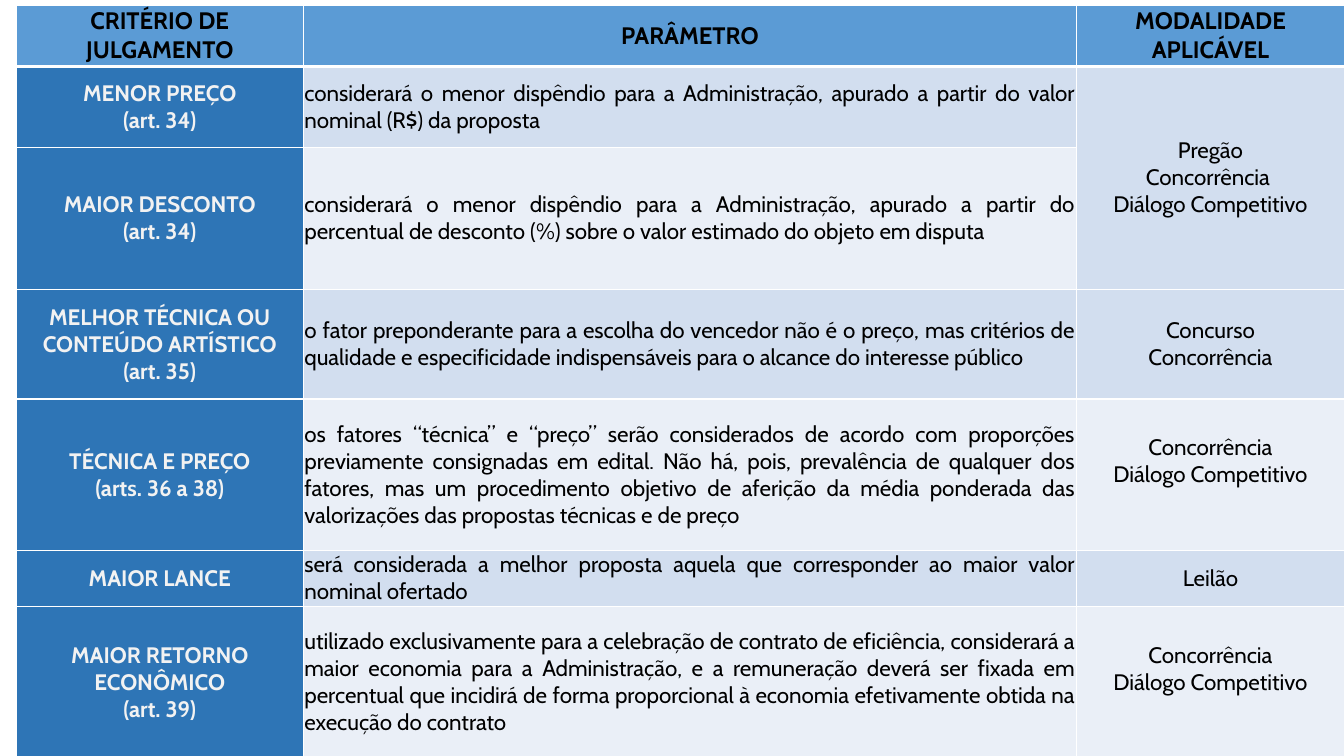
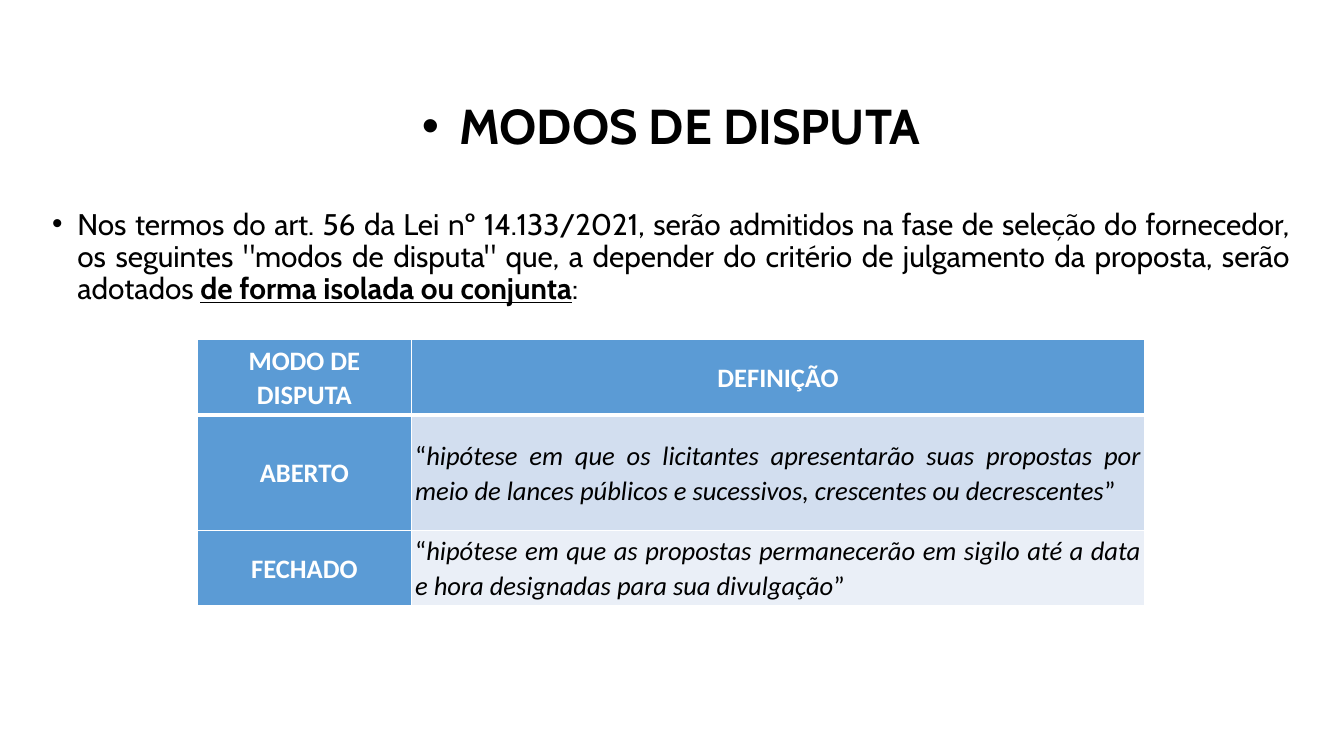
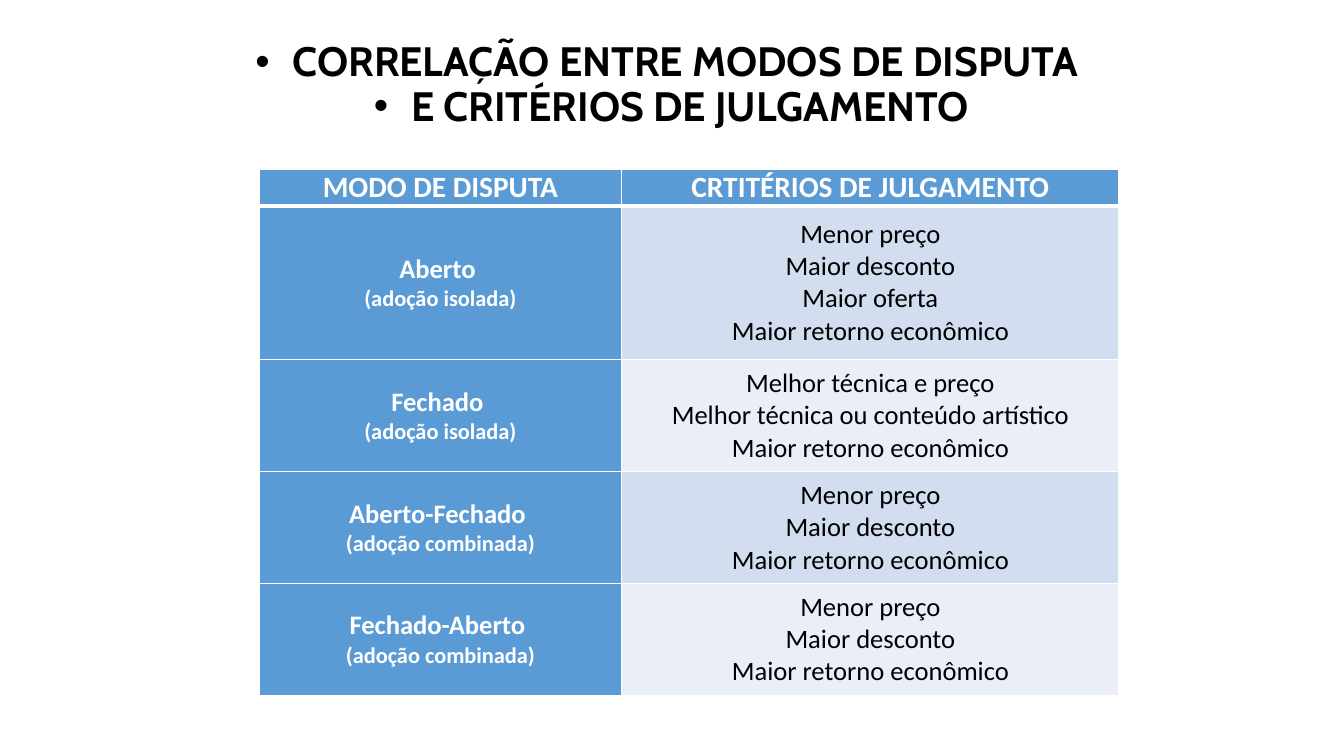
import pptx
import pptx.dml.color
import pptx.enum.text
import pptx.oxml
import pptx.oxml.ns
import pptx.util

Pt = pptx.util.Pt
ALIGN = pptx.enum.text.PP_ALIGN
ANCHOR = pptx.enum.text.MSO_ANCHOR

BLACK, WHITE, PALE = "000000", "FFFFFF", "F2F2F2"
BLUE, DARK_BLUE = "5B9BD5", "2E75B6"
BANDS = ("D2DEEF", "EAEFF7")
TEXT_LEFT, TEXT_WIDTH = 30.2, 898.6
LINE_HEIGHT = 19.4


def note(text):
    return [(text, {"size": 16})]


def quote(text):
    return [("“", {}), (text, {"italic": True}), ("”", {})]


CRITERIA = {
    "place": (11.5, 3.6),
    "widths": (205.2, 552.2, 191.5),
    "heights": (43.9, 57.6, 101.5, 78.5, 108, 40.3, 108),
    "aligns": (ALIGN.CENTER, ALIGN.JUSTIFY, ALIGN.CENTER),
    "font": "Cabin", "header_size": 17, "size": 16, "inset": 0.7, "spacing": 1,
    "header_color": BLACK, "side_color": PALE, "side_fill": DARK_BLUE,
    "merges": [((1, 2), (2, 2))],
    "raised": [(4, 2), (6, 2)],
    "rows": [
        [["CRITÉRIO DE JULGAMENTO"], ["PARÂMETRO"], ["MODALIDADE APLICÁVEL"]],
        [["MENOR PREÇO", "(art. 34)"],
         ["considerará o menor dispêndio para a Administração, apurado a partir do valor "
          "nominal (R$) da proposta"],
         ["Pregão", "Concorrência ", "Diálogo Competitivo"]],
        [["MAIOR DESCONTO", "(art. 34)"],
         ["considerará o menor dispêndio para a Administração, apurado a partir do "
          "percentual de desconto (%) sobre o valor estimado do objeto em disputa"],
         []],
        [["MELHOR TÉCNICA OU CONTEÚDO ARTÍSTICO", "(art. 35)"],
         ["o fator preponderante para a escolha do vencedor não é o preço, mas critérios de "
          "qualidade e especificidade indispensáveis para o alcance do interesse público"],
         ["Concurso", "Concorrência"]],
        [["TÉCNICA E PREÇO", "(arts. 36 a 38)"],
         ["os fatores “técnica” e “preço” serão considerados de acordo com proporções "
          "previamente consignadas em edital. Não há, pois, prevalência de qualquer dos "
          "fatores, mas um procedimento objetivo de aferição da média ponderada das "
          "valorizações das propostas técnicas e de preço"],
         ["Concorrência", "Diálogo Competitivo"]],
        [["MAIOR LANCE"],
         ["será considerada a melhor proposta aquela que corresponder ao maior valor "
          "nominal ofertado"],
         ["Leilão"]],
        [["MAIOR RETORNO ECONÔMICO", "(art. 39)"],
         ["utilizado exclusivamente para a celebração de contrato de eficiência, considerará a "
          "maior economia para a Administração, e a remuneração deverá ser fixada em "
          "percentual que incidirá de forma proporcional à economia efetivamente obtida na "
          "execução do contrato"],
         ["Concorrência", "Diálogo Competitivo"]],
    ],
}

MODES = {
    "place": (141.1, 242.6),
    "widths": (152.6, 524.2),
    "heights": (54, 82.1, 54),
    "aligns": (ALIGN.CENTER, ALIGN.JUSTIFY),
    "font": "Calibri", "header_size": 19, "size": 19, "inset": 2.9, "spacing": 1.07,
    "header_color": WHITE, "side_color": WHITE, "side_fill": BLUE,
    "rows": [
        [["MODO DE DISPUTA"], ["DEFINIÇÃO"]],
        [["ABERTO"],
         [quote("hipótese em que os licitantes apresentarão suas propostas por meio de lances "
                "públicos e sucessivos, crescentes ou decrescentes")]],
        [["FECHADO"],
         [quote("hipótese em que as propostas permanecerão em sigilo até a data e hora "
                "designadas para sua divulgação")]],
    ],
}

COMMON = ["Menor preço", "Maior desconto", "Maior retorno econômico"]
CORRELATION = {
    "place": (185, 121),
    "widths": (259.2, 355),
    "heights": (25.9, 110.2, 79.9, 79.9, 79.9),
    "aligns": (ALIGN.CENTER, ALIGN.CENTER),
    "font": "Calibri", "header_size": 21, "size": 19, "inset": 7.2, "spacing": 1,
    "header_color": WHITE, "side_color": WHITE, "side_fill": BLUE,
    "rows": [
        [["MODO DE DISPUTA"], ["CRTITÉRIOS DE JULGAMENTO"]],
        [["Aberto ", note("(adoção isolada)")],
         ["Menor preço", "Maior desconto", "Maior oferta", "Maior retorno econômico"]],
        [["Fechado ", note("(adoção isolada)")],
         ["Melhor técnica e preço", "Melhor técnica ou conteúdo artístico",
          "Maior retorno econômico"]],
        [["Aberto-Fechado ", note("(adoção combinada)")], COMMON],
        [["Fechado-Aberto ", note("(adoção combinada)")], COMMON],
    ],
}

INTRO = [
    ("Nos termos do art. 56 da Lei nº 14.133/2021, serão admitidos na fase de seleção do "
     "fornecedor, os seguintes \"modos de disputa\" que, a depender do critério de julgamento "
     "da proposta, serão adotados ", {}),
    ("de forma isolada ou conjunta", {"bold": True, "underline": True}),
    (":", {}),
]

SLIDES = [
    {"table": CRITERIA},
    {"title": ["MODOS DE DISPUTA"], "title_top": 69.1, "title_size": 35,
     "intro": INTRO, "table": MODES},
    {"title": ["CORRELAÇÃO ENTRE MODOS DE DISPUTA ", "E CRITÉRIOS DE JULGAMENTO"],
     "title_top": 25.9, "title_size": 29.3, "table": CORRELATION},
]


def rgb(value):
    return pptx.dml.color.RGBColor.from_string(value)


def add_bullet(para, indent):
    properties = para._p.get_or_add_pPr()
    properties.set("marL", str(Pt(indent)))
    properties.set("indent", str(-Pt(indent)))
    for tag, name, value in (("buFont", "typeface", "Arial"), ("buChar", "char", "•")):
        properties.append(pptx.oxml.parse_xml(
            f'<a:{tag} {pptx.oxml.ns.nsdecls("a")} {name}="{value}"/>'))


def write(frame, lines, color, align, spacing, bullet=None, **formats):
    frame.word_wrap = True
    for index, line in enumerate(lines):
        para = frame.paragraphs[0] if index == 0 else frame.add_paragraph()
        if bullet:
            add_bullet(para, bullet)
        para.alignment = align
        para.line_spacing = spacing
        para.space_before = para.space_after = Pt(0)
        for text, extra in ([(line, {})] if isinstance(line, str) else line):
            span = para.add_run()
            span.text = text
            span.font.color.rgb = rgb(color)
            for name, value in {**formats, **extra}.items():
                setattr(span.font, name, Pt(value) if name == "size" else value)


def set_borders(cell, top, bottom):
    properties = cell._tc.get_or_add_tcPr()
    for index, (side, width) in enumerate((("L", 1), ("R", 1), ("T", top), ("B", bottom))):
        properties.insert(index, pptx.oxml.parse_xml(
            f'<a:ln{side} {pptx.oxml.ns.nsdecls("a")} w="{Pt(width)}"><a:solidFill>'
            f'<a:srgbClr val="{WHITE}"/></a:solidFill></a:ln{side}>'))


def add_table(page, data):
    rows, widths, heights = data["rows"], data["widths"], data["heights"]
    bounds = [Pt(v) for v in (*data["place"], sum(widths), sum(heights))]
    table = page.shapes.add_table(len(rows), len(widths), *bounds).table
    table.first_row = table.horz_banding = False
    for column, width in zip(table.columns, widths):
        column.width = Pt(width)
    for r, row in enumerate(rows):
        table.rows[r].height = Pt(heights[r])
        for c, lines in enumerate(row):
            cell = table.cell(r, c)
            if r == 0:
                fill, color, size = BLUE, data["header_color"], data["header_size"]
            elif c == 0:
                fill, color, size = data["side_fill"], data["side_color"], data["size"]
            else:
                fill, color, size = BANDS[(r - 1) % 2], BLACK, data["size"]
            set_borders(cell, 3 if r == 1 else 1, 3 if r == 0 else 1)
            cell.fill.solid()
            cell.fill.fore_color.rgb = rgb(fill)
            cell.vertical_anchor = ANCHOR.MIDDLE
            raised = (r, c) in data.get("raised", [])
            cell.margin_left = cell.margin_right = Pt(data["inset"])
            cell.margin_top, cell.margin_bottom = Pt(0), Pt(LINE_HEIGHT if raised else 0)
            align = ALIGN.CENTER if r == 0 else data["aligns"][c]
            write(cell.text_frame, lines, color, align, data["spacing"],
                  name=data["font"], size=size, bold=r == 0 or c == 0)
    for first, last in data.get("merges", []):
        table.cell(*first).merge(table.cell(*last))


def add_title(page, lines, top, size):
    title = page.shapes.title
    title.left, title.top = Pt(TEXT_LEFT), Pt(top)
    title.width, title.height = Pt(TEXT_WIDTH), Pt(8 + 1.1 * size * len(lines))
    frame = title.text_frame
    frame.auto_size = pptx.enum.text.MSO_AUTO_SIZE.NONE
    frame.vertical_anchor = ANCHOR.TOP
    write(frame, lines, BLACK, ALIGN.CENTER, 0.9, 26.6, name="Cabin", size=size, bold=True)


def main():
    deck = pptx.Presentation()
    deck.slide_width, deck.slide_height = Pt(960), Pt(540)
    for content in SLIDES:
        page = deck.slides.add_slide(deck.slide_layouts[5 if "title" in content else 6])
        if "title" in content:
            add_title(page, content["title"], content["title_top"], content["title_size"])
        if "intro" in content:
            box = page.shapes.add_textbox(Pt(TEXT_LEFT), Pt(146), Pt(TEXT_WIDTH), Pt(78))
            write(box.text_frame, [content["intro"]], BLACK, ALIGN.JUSTIFY, 0.9, 18,
                  name="Cabin", size=21.3, bold=False)
        add_table(page, content["table"])
    deck.save("out.pptx")


if __name__ == "__main__":
    main()
